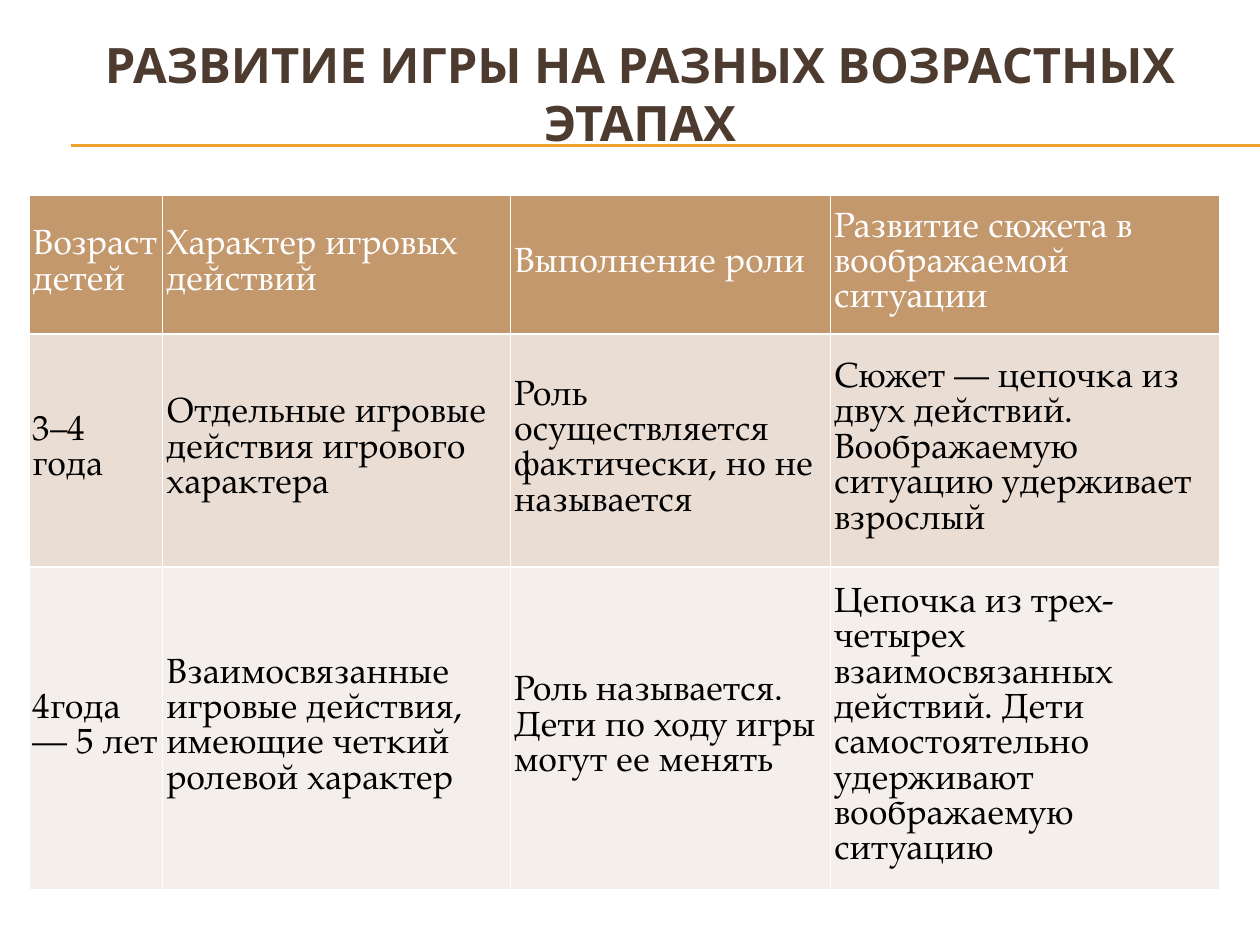
"""Build a slide with a table on how children's play develops by age."""
import pptx
import pptx.dml.color
import pptx.enum.shapes
import pptx.enum.text
import pptx.oxml.ns
import pptx.util
from lxml import etree

TITLE = "РАЗВИТИЕ ИГРЫ НА РАЗНЫХ ВОЗРАСТНЫХ ЭТАПАХ"
ROWS = [
    ("Возраст детей", "Характер игровых действий", "Выполнение роли",
     "Развитие сюжета в воображаемой ситуации"),
    ("3–4 года", "Отдельные игровые действия игрового характера",
     "Роль осуществляется фактически, но не называется",
     "Сюжет — цепочка из двух действий. Воображаемую ситуацию удерживает взрослый"),
    ("4года — 5 лет", "Взаимосвязанные игровые действия, имеющие четкий ролевой характер",
     "Роль называется. Дети по ходу игры могут ее менять",
     "Цепочка из трех-четырех взаимосвязанных действий. Дети самостоятельно "
     "удерживают воображаемую ситуацию"),
]
COLS = (1.06, 2.76, 2.54, 3.09)
HEIGHTS = (1.1, 1.85, 2.56)
RULES = (1.15, 1.16)
THEME = {
    "title": {"name": "Open Sans", "size": 27.9, "bold": True, "color": "4E3B30", "spacing": 33},
    "head": {"name": "TeX Gyre Pagella", "size": 20, "bold": False, "color": "FFFFFF", "spacing": 20.2},
    "body": {"name": "TeX Gyre Pagella", "size": 20, "bold": False, "color": "000000", "spacing": 20.2},
    "fills": ("C3986D", "E9DDD4", "F5EFEB"),
    "rule": "F0A22E",
    "border": "FFFFFF",
}
Inches, Pt = pptx.util.Inches, pptx.util.Pt
RGB = pptx.dml.color.RGBColor.from_string
MIDDLE = pptx.enum.text.MSO_ANCHOR.MIDDLE


def set_attrs(obj, values):
    for key, value in values.items():
        setattr(obj, key, value)


def write(tf, text, style):
    tf.word_wrap = True
    p = tf.paragraphs[0]
    p.line_spacing = Pt(style["spacing"])
    r = p.add_run()
    r.text = text
    set_attrs(r.font, {"name": style["name"], "size": Pt(style["size"]), "bold": style["bold"]})
    r.font.color.rgb = RGB(style["color"])
    return p


def add_rule(s, y):
    line = s.shapes.add_connector(pptx.enum.shapes.MSO_CONNECTOR.STRAIGHT,
                                  Inches(0.56), Inches(y), Inches(10), Inches(y))
    line.line.width = Pt(0.75)
    line.line.color.rgb = RGB(THEME["rule"])
    etree.SubElement(line._element.spPr, pptx.oxml.ns.qn("a:effectLst"))


def add_borders(cell):
    tc_pr = cell._tc.get_or_add_tcPr()
    for i, side in enumerate(("lnL", "lnR", "lnT", "lnB")):
        ln = etree.Element(pptx.oxml.ns.qn("a:" + side), w=str(Pt(1)))
        fill = etree.SubElement(ln, pptx.oxml.ns.qn("a:solidFill"))
        etree.SubElement(fill, pptx.oxml.ns.qn("a:srgbClr"), val=THEME["border"])
        tc_pr.insert(i, ln)


def add_table(s):
    box = map(Inches, (0.23, 1.55, sum(COLS), sum(HEIGHTS)))
    table = s.shapes.add_table(len(ROWS), len(COLS), *box).table
    for col, width in zip(table.columns, COLS):
        col.width = Inches(width)
    margins = dict.fromkeys(("margin_left", "margin_right", "margin_top", "margin_bottom"), Inches(0.03))
    for i, texts in enumerate(ROWS):
        table.rows[i].height = Inches(HEIGHTS[i])
        for j, text in enumerate(texts):
            cell = table.cell(i, j)
            set_attrs(cell, {**margins, "vertical_anchor": MIDDLE})
            cell.fill.solid()
            cell.fill.fore_color.rgb = RGB(THEME["fills"][i])
            write(cell.text_frame, text, THEME["body" if i else "head"])
            add_borders(cell)


def main():
    prs = pptx.Presentation()
    set_attrs(prs, {"slide_width": Inches(10), "slide_height": Inches(7.5)})
    s = prs.slides.add_slide(prs.slide_layouts[6])
    for y in RULES:
        add_rule(s, y)
    tf = s.shapes.add_textbox(*map(Inches, (0.33, 0.31, 9.5, 0.86))).text_frame
    tf.vertical_anchor = MIDDLE
    write(tf, TITLE, THEME["title"]).alignment = pptx.enum.text.PP_ALIGN.CENTER
    add_table(s)
    prs.save("out.pptx")


if __name__ == "__main__":
    main()
